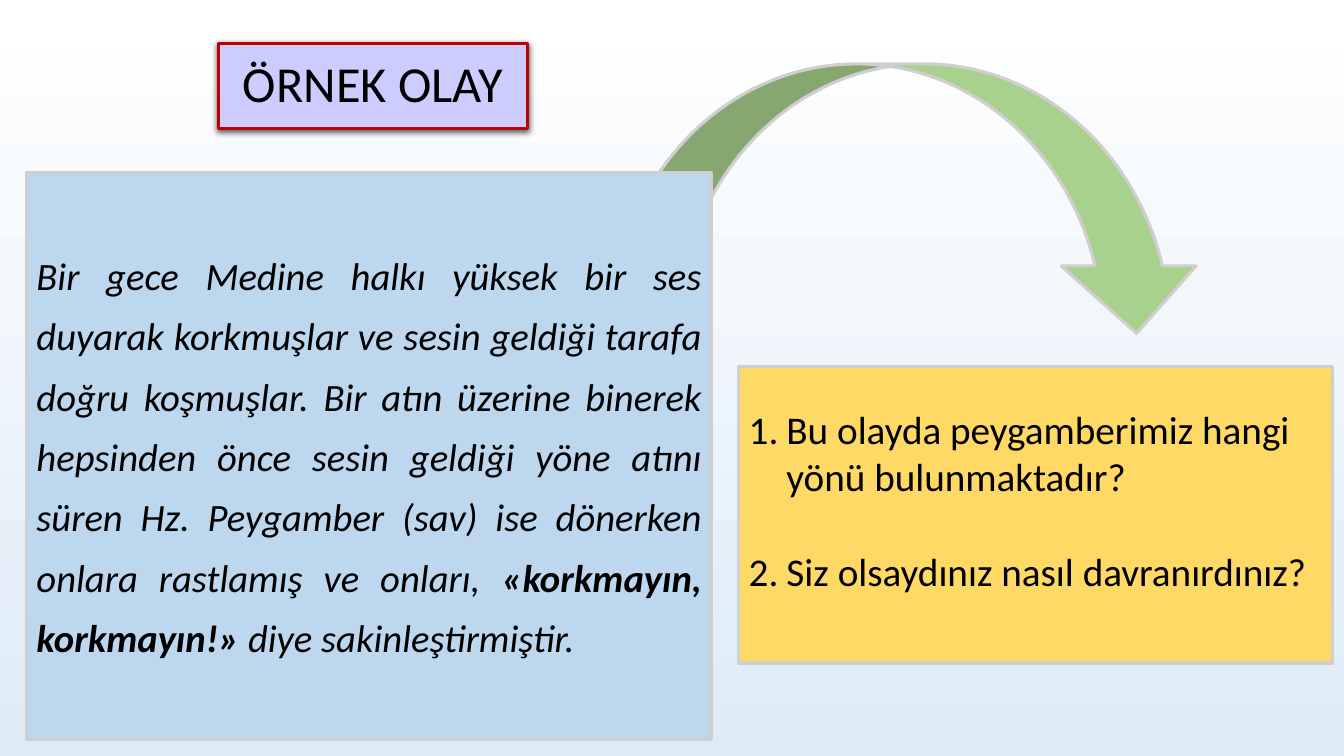
from dataclasses import dataclass

from lxml import etree
from pptx import Presentation
from pptx import util as u
from pptx.dml.color import RGBColor
from pptx.enum import shapes, text
from pptx.oxml import ns


@dataclass(frozen=True)
class Theme:
    font: str = "Calibri"
    ink: str = "000000"
    sky_top: str = "FFFFFF"
    sky_bottom: str = "DEEBF7"
    title_fill: str = "CCCCFF"
    title_line: str = "C00000"
    story_fill: str = "BDD7EE"
    question_fill: str = "FFD966"
    arrow_fill: str = "A9D18E"
    border: str = "D0CECE"
    border_width: float = 2.25
    title_size: float = 36
    story_size: float = 27.6
    question_size: float = 28


THEME = Theme()

# Left, top, width, height in centimetres
TITLE_BOX = (5.5, 1.09, 7.8, 2.16)
QUESTION_BOX = (18.62, 9.24, 14.97, 7.47)
ARROW_BOX = (15.39, 1.61, 14.95, 6.79)
STORY_BOX = (0.67, 4.34, 17.25, 14.29)

STORY = [
    ("Bir gece Medine halkı yüksek bir ses duyarak korkmuşlar ve sesin geldiği "
     "tarafa doğru koşmuşlar. Bir atın üzerine binerek hepsinden önce sesin "
     "geldiği yöne atını süren Hz. Peygamber (sav) ise dönerken onlara "
     "rastlamış ve onları, ", False),
    ("«korkmayın, korkmayın!» ", True),
    ("diye sakinleştirmiştir.", False),
]
QUESTIONS = [
    "Bu olayda peygamberimiz hangi yönü bulunmaktadır?",
    "Siz olsaydınız nasıl davranırdınız?",
]


def add_panel(slide, box, fill, line=THEME.border, kind=shapes.MSO_SHAPE.RECTANGLE):
    shape = slide.shapes.add_shape(kind, *(u.Cm(length) for length in box))
    shape.shadow.inherit = False
    shape.fill.solid()
    shape.fill.fore_color.rgb = RGBColor.from_string(fill)
    shape.line.color.rgb = RGBColor.from_string(line)
    shape.line.width = u.Pt(THEME.border_width)
    frame = shape.text_frame
    frame.word_wrap = True
    frame.vertical_anchor = text.MSO_ANCHOR.MIDDLE
    return shape


def add_run(paragraph, words, size, bold=False, italic=False):
    run = paragraph.add_run()
    run.text = words
    run.font.name = THEME.font
    run.font.size = u.Pt(size)
    run.font.bold = bold
    run.font.italic = italic
    run.font.color.rgb = RGBColor.from_string(THEME.ink)


def add_drop_shadow(shape):
    effects = shape.element.spPr.find(ns.qn("a:effectLst"))
    shadow = etree.SubElement(
        effects, ns.qn("a:outerShdw"), blurRad=str(u.Pt(4.5)),
        dist=str(u.Pt(1.5)), dir="5400000", algn="ctr", rotWithShape="0")
    colour = etree.SubElement(shadow, ns.qn("a:srgbClr"), val=THEME.ink)
    etree.SubElement(colour, ns.qn("a:alpha"), val="63000")


def number_paragraph(paragraph, indent):
    properties = paragraph._p.get_or_add_pPr()
    properties.set("marL", str(indent))
    properties.set("indent", str(-indent))
    etree.SubElement(properties, ns.qn("a:buFont"), typeface="+mj-lt")
    etree.SubElement(properties, ns.qn("a:buAutoNum"), type="arabicPeriod")


def paint_background(slide):
    fill = slide.background.fill
    fill.gradient()
    fill.gradient_angle = 270
    for stop, colour in zip(fill.gradient_stops, (THEME.sky_top, THEME.sky_bottom)):
        stop.color.rgb = RGBColor.from_string(colour)


def add_title(slide, box):
    shape = add_panel(slide, box, THEME.title_fill, THEME.title_line)
    add_drop_shadow(shape)
    paragraph = shape.text_frame.paragraphs[0]
    paragraph.alignment = text.PP_ALIGN.CENTER
    paragraph.line_spacing = 0.9
    add_run(paragraph, "ÖRNEK OLAY", THEME.title_size)


def add_questions(slide, box):
    frame = add_panel(slide, box, THEME.question_fill).text_frame
    frame.margin_bottom = u.Cm(0.9)
    for index, question in enumerate(QUESTIONS):
        paragraph = frame.add_paragraph() if index else frame.paragraphs[0]
        paragraph.alignment = text.PP_ALIGN.LEFT
        if index:
            paragraph.space_before = u.Pt(34)
        number_paragraph(paragraph, u.Cm(0.95))
        add_run(paragraph, question, THEME.question_size)


def add_story(slide, box):
    frame = add_panel(slide, box, THEME.story_fill).text_frame
    frame.margin_right = u.Cm(0.23)
    frame.margin_bottom = u.Cm(0.46)
    paragraph = frame.paragraphs[0]
    paragraph.alignment = text.PP_ALIGN.JUSTIFY
    paragraph.line_spacing = 1.3
    for words, bold in STORY:
        add_run(paragraph, words, THEME.story_size, bold=bold, italic=True)


def main():
    presentation = Presentation()
    presentation.slide_width = u.Cm(33.87)
    presentation.slide_height = u.Cm(19.05)
    slide = presentation.slides.add_slide(presentation.slide_layouts[6])
    paint_background(slide)
    add_title(slide, TITLE_BOX)
    add_questions(slide, QUESTION_BOX)
    add_panel(slide, ARROW_BOX, THEME.arrow_fill,
              kind=shapes.MSO_SHAPE.CURVED_DOWN_ARROW)
    add_story(slide, STORY_BOX)
    presentation.save("out.pptx")


if __name__ == "__main__":
    main()
